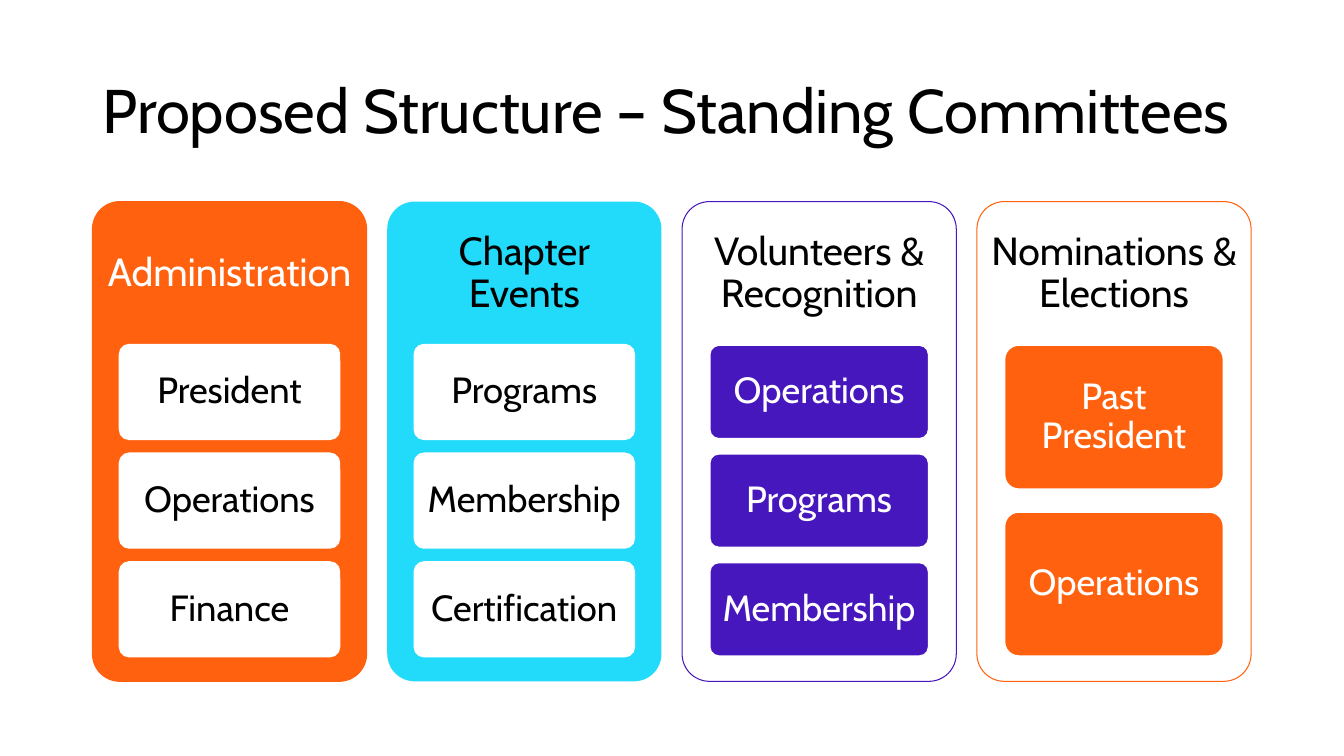
from dataclasses import dataclass

from pptx import Presentation as Deck
from pptx.dml.color import RGBColor as Color
from pptx.enum.shapes import MSO_SHAPE as Shape
from pptx.enum.text import MSO_ANCHOR as Anchor, PP_ALIGN as Align
from pptx.util import Cm, Pt


@dataclass(frozen=True)
class Theme:
    font: str = "Cabin"
    white: str = "FFFFFF"
    black: str = "000000"
    orange: str = "FF610F"
    cyan: str = "22DBFA"
    violet: str = "4617BC"
    title: int = 44
    head: int = 28
    tile: int = 26


look = Theme()

LEFT, TOP, WIDE, TALL, STEP = 2.33, 5.08, 6.91, 12.09, 7.43
HEAD = 3.63
INSET, FIRST, SPAN = 0.69, 8.69, 7.85
GAP = 0.154

CARDS = [
    ("Administration", look.orange, look.orange, look.white,
     look.white, look.black, ["President", "Operations", "Finance"]),
    ("Chapter Events", look.cyan, None, look.black,
     look.white, look.black, ["Programs", "Membership", "Certification"]),
    ("Volunteers & Recognition", look.white, look.violet, look.black,
     look.violet, look.white, ["Operations", "Programs", "Membership"]),
    ("Nominations & Elections", look.white, look.orange, look.black,
     look.orange, look.white, ["Past President", "Operations"]),
]


def apply(target, values):
    for name, value in values.items():
        setattr(target, name, value)


def write(shape, text, size, ink, pad, align=Align.CENTER):
    frame = shape.text_frame
    apply(frame, {
        "word_wrap": True,
        "vertical_anchor": Anchor.MIDDLE,
        "margin_left": Cm(pad[0]),
        "margin_right": Cm(pad[0]),
        "margin_top": Cm(pad[1]),
        "margin_bottom": Cm(pad[1]),
    })
    para = frame.paragraphs[0]
    apply(para, {"alignment": align, "line_spacing": 0.9})
    run = para.add_run()
    run.text = text
    apply(run.font, {"name": look.font, "size": Pt(size)})
    run.font.color.rgb = Color.from_string(ink)


def label(slide, box, *style):
    write(slide.shapes.add_textbox(*map(Cm, box)), *style)


def panel(slide, box, fill, edge, width):
    shape = slide.shapes.add_shape(Shape.ROUNDED_RECTANGLE, *map(Cm, box))
    shape.adjustments[0] = 0.1
    shape.shadow.inherit = False
    shape.fill.solid()
    shape.fill.fore_color.rgb = Color.from_string(fill)
    if edge:
        shape.line.color.rgb = Color.from_string(edge)
        shape.line.width = Pt(width)
    else:
        shape.line.fill.background()
    return shape


def stack(slide, left, names, fill, ink):
    count = len(names)
    height = SPAN / (count + (count - 1) * GAP)
    for row, name in enumerate(names):
        top = FIRST + row * height * (1 + GAP)
        box = (left + INSET, top, WIDE - 2 * INSET, height)
        tile = panel(slide, box, fill, look.white, 1.5)
        write(tile, name, look.tile, ink, (0.17, 0.13))


def card(slide, left, head, fill, edge, ink, tint, text, names):
    panel(slide, (left, TOP, WIDE, TALL), fill, edge, 0.75)
    label(slide, (left, TOP, WIDE, HEAD), head, look.head, ink, (0.3, 0.3))
    stack(slide, left, names, tint, text)


def main():
    deck = Deck()
    apply(deck, {"slide_width": Cm(33.87), "slide_height": Cm(19.05)})
    slide = deck.slides.add_slide(deck.slide_layouts[6])
    label(slide, (LEFT, 1.01, 29.21, 3.68),
          "Proposed Structure – Standing Committees",
          look.title, look.black, (0.25, 0.13), Align.LEFT)
    for place, data in enumerate(CARDS):
        card(slide, LEFT + place * STEP, *data)
    deck.save("out.pptx")


if __name__ == "__main__":
    main()
